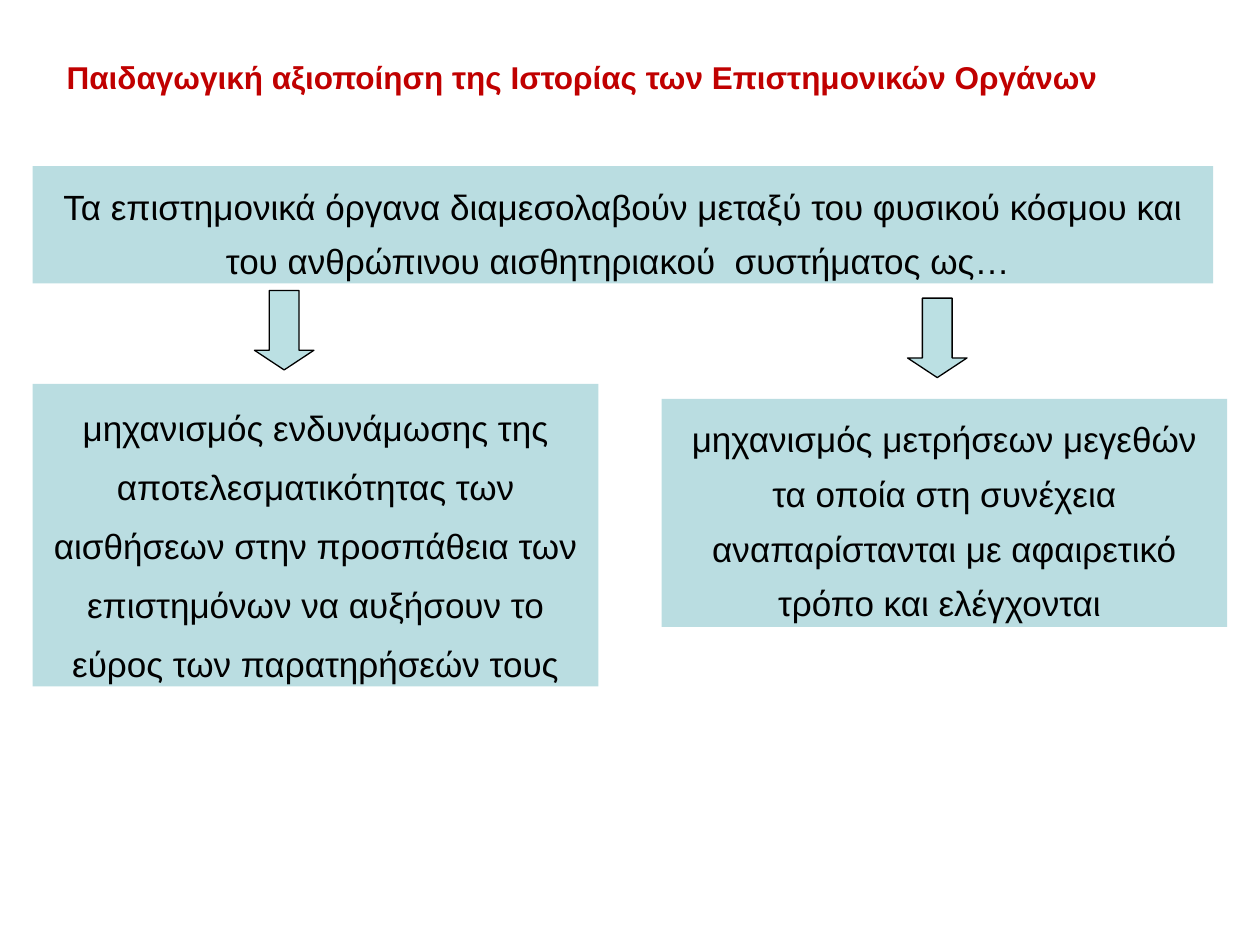
from dataclasses import dataclass

from pptx import Presentation
from pptx.dml.color import RGBColor
from pptx.enum.shapes import MSO_SHAPE
from pptx.enum.text import MSO_ANCHOR, MSO_AUTO_SIZE, PP_ALIGN
from pptx.util import Pt

BLACK = RGBColor(0x00, 0x00, 0x00)
RED = RGBColor(0xC0, 0x00, 0x00)
PANEL = RGBColor(0xBA, 0xDD, 0xE1)
ARROW = RGBColor(0xBB, 0xE0, 0xE3)

FRAME = {"word_wrap": True, "auto_size": MSO_AUTO_SIZE.SHAPE_TO_FIT_TEXT,
         "vertical_anchor": MSO_ANCHOR.TOP}
BODY = {"name": "Arial", "size": Pt(20), "bold": False}
HEAD = {"name": "Arial", "size": Pt(18), "bold": True}


@dataclass
class Box:
    left: float
    top: float
    width: float
    height: float
    text: str
    lead: float = 1.3

    def area(self) -> tuple:
        return Pt(self.left), Pt(self.top), Pt(self.width), Pt(self.height)


def apply(item, style: dict) -> None:
    for key, value in style.items():
        setattr(item, key, value)


def write(shape, text: str, font: dict, color: RGBColor, para: dict) -> None:
    frame = shape.text_frame
    apply(frame, FRAME)
    line = frame.paragraphs[0]
    apply(line, para)
    run = line.add_run()
    run.text = text
    apply(run.font, font)
    run.font.color.rgb = color


def draw_panel(slide, box: Box) -> None:
    shape = slide.shapes.add_shape(MSO_SHAPE.RECTANGLE, *box.area())
    shape.shadow.inherit = False
    shape.fill.solid()
    shape.fill.fore_color.rgb = PANEL
    shape.line.fill.background()
    write(shape, box.text, BODY, BLACK,
          {"alignment": PP_ALIGN.CENTER, "line_spacing": box.lead,
           "space_before": Pt(10)})


def draw_arrow(slide, left: float, top: float) -> None:
    shape = slide.shapes.add_shape(MSO_SHAPE.DOWN_ARROW, Pt(left), Pt(top),
                                   Pt(34), Pt(45.4))
    shape.shadow.inherit = False
    shape.adjustments[0] = 0.5
    shape.adjustments[1] = 0.33
    shape.fill.solid()
    shape.fill.fore_color.rgb = ARROW
    shape.line.color.rgb = BLACK
    shape.line.width = Pt(0.75)


TITLE = Box(31, 29.5, 635, 28.8,
            "Παιδαγωγική αξιοποίηση της Ιστορίας των Επιστημονικών Οργάνων")
PANELS = [
    Box(18.7, 95, 674.6, 67,
        "Τα επιστημονικά όργανα διαμεσολαβούν μεταξύ του φυσικού κόσμου και "
        "του ανθρώπινου αισθητηριακού  συστήματος ως… "),
    Box(18.7, 219.4, 323.3, 172.8,
        "μηχανισμός ενδυνάμωσης της αποτελεσματικότητας των αισθήσεων στην "
        "προσπάθεια των επιστημόνων να αυξήσουν το εύρος των παρατηρήσεών "
        "τους", 1.4),
    Box(378, 228, 323.3, 130.3,
        "μηχανισμός μετρήσεων μεγεθών τα οποία στη συνέχεια αναπαρίστανται "
        "με αφαιρετικό τρόπο και ελέγχονται "),
]
ARROWS = [(145.4, 166), (518.6, 170.4)]


def main() -> None:
    deck = Presentation()
    deck.slide_width, deck.slide_height = Pt(720), Pt(540)
    slide = deck.slides.add_slide(deck.slide_layouts[6])

    # Statement and the two roles
    for box in PANELS:
        draw_panel(slide, box)

    # Arrows from the statement to each role
    for left, top in ARROWS:
        draw_arrow(slide, left, top)

    # Title
    title = slide.shapes.add_textbox(*TITLE.area())
    write(title, TITLE.text, HEAD, RED, {"space_before": Pt(9)})

    deck.save("out.pptx")


if __name__ == "__main__":
    main()
